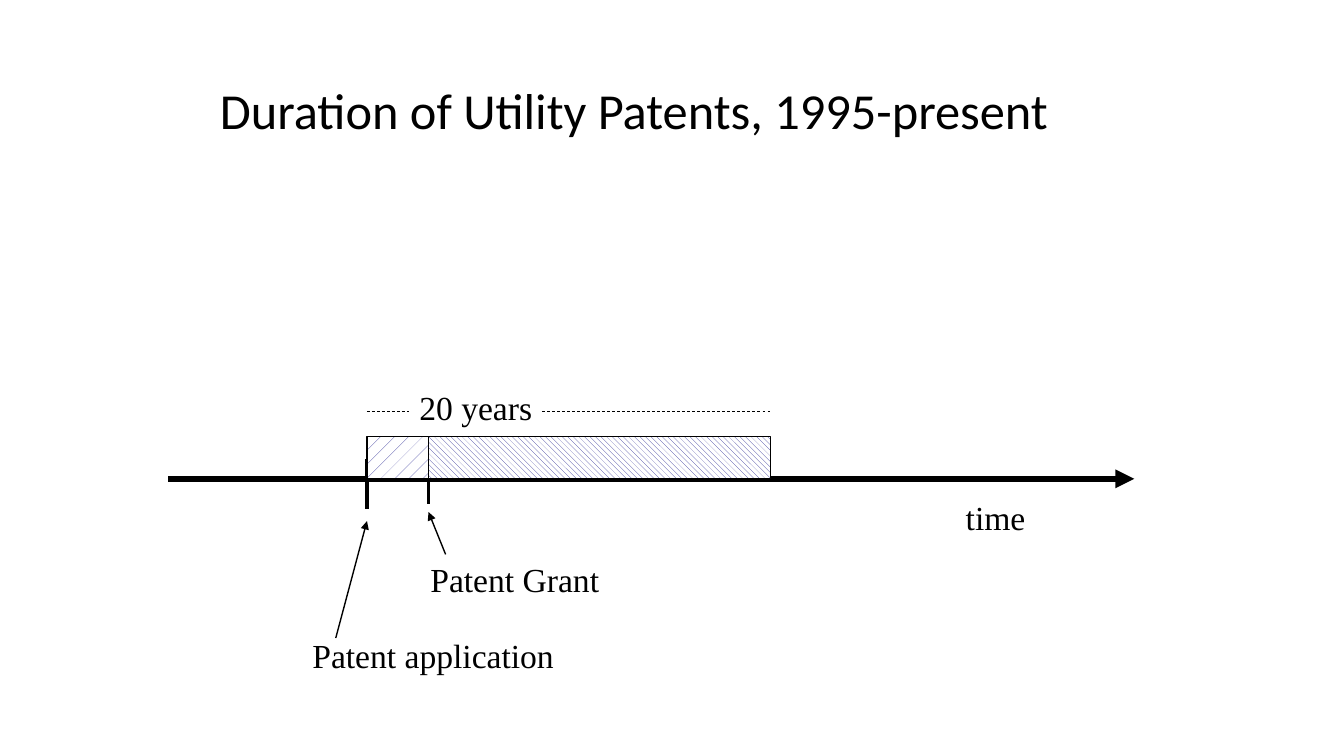
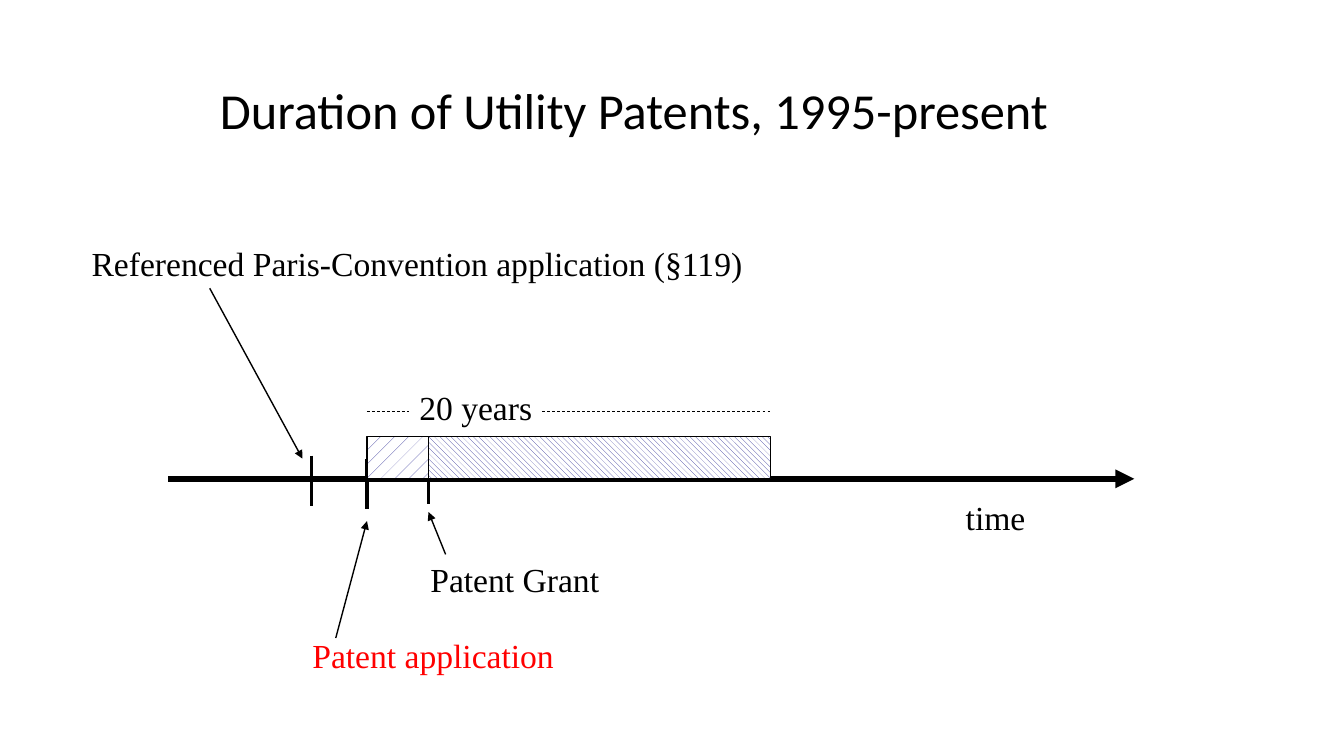
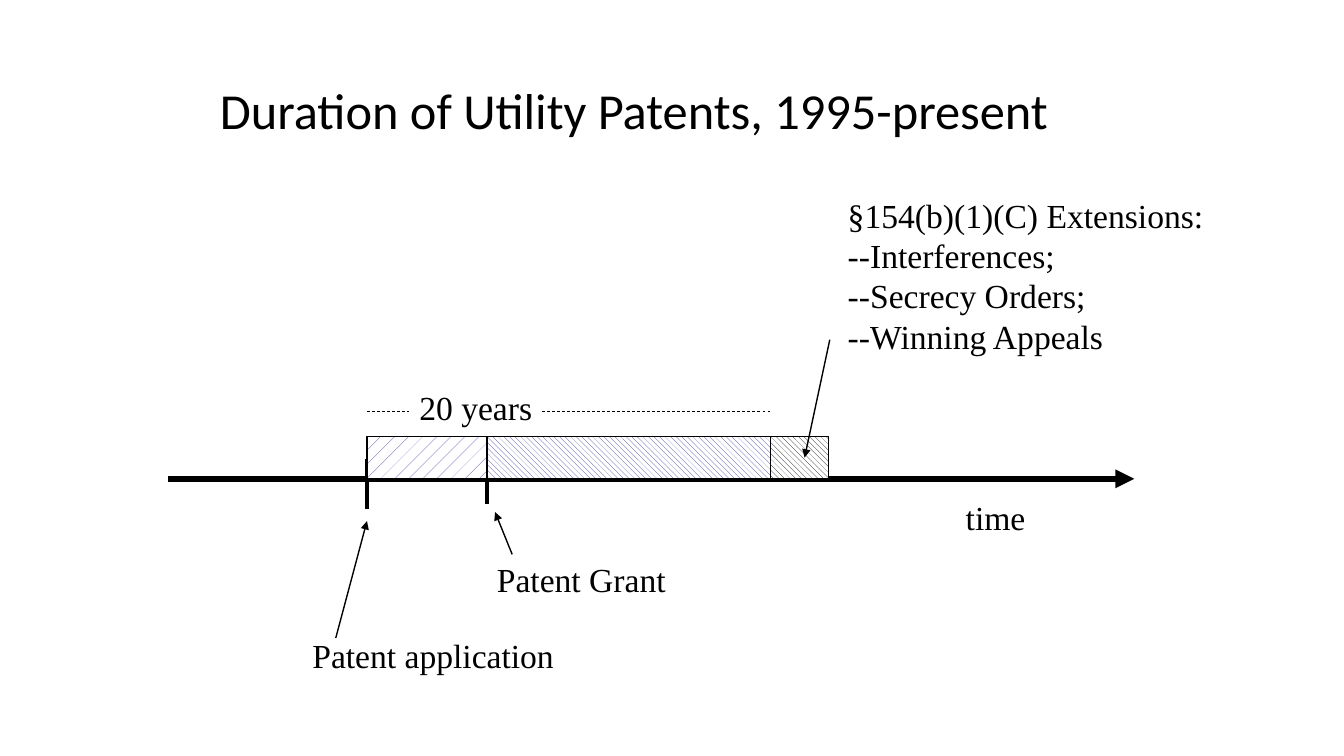
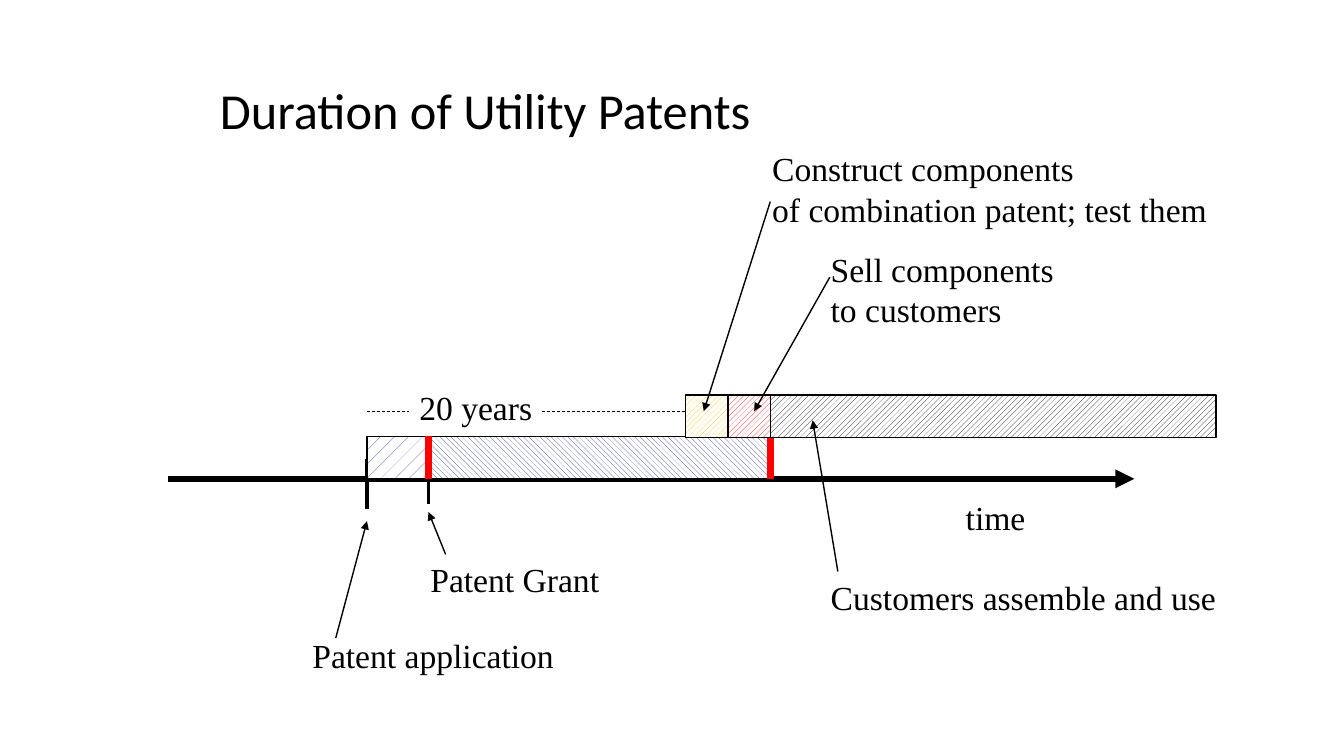
from lxml.etree import SubElement
from pptx import Presentation
from pptx.dml.color import RGBColor
from pptx.enum.dml import MSO_LINE, MSO_PATTERN
from pptx.enum.shapes import MSO_CONNECTOR, MSO_SHAPE
from pptx.enum.text import MSO_ANCHOR, MSO_AUTO_SIZE, PP_ALIGN
from pptx.oxml.ns import qn
from pptx.util import Inches, Pt

COLORS = {
    "black": "000000",
    "white": "FFFFFF",
    "blue": "333399",
    "red": "FF0000",
    "gold": "FFCC00",
}
HEAD, BODY = "Calibri", "Times New Roman"
TITLE = (2.08, 0.5, 9.5, 1.25)
TIME = (1.67, 3.79, 9.58, 2.96)
BAR = 0.42   # height of every bar
ROW = 0.5    # height of a one-line label
TERM = "Duration of Utility Patents, 1995-present"
DOWN = MSO_PATTERN.WIDE_DOWNWARD_DIAGONAL
UP = MSO_PATTERN.WIDE_UPWARD_DIAGONAL
DOTS = MSO_PATTERN.PERCENT_5


def color(name):
    return RGBColor.from_string(COLORS[name])


def style(para, font, size, tint="black"):
    for run in para.runs:
        run.font.name = font
        run.font.size = Pt(size)
        run.font.color.rgb = color(tint)


# Basic parts
def line(slide, start, end, width=1, tint="black", arrow=False, dash=False):
    link = slide.shapes.add_connector(
        MSO_CONNECTOR.STRAIGHT, *[Inches(v) for v in (*start, *end)])
    link.line.width = Pt(width)
    link.line.color.rgb = color(tint)
    if dash:
        link.line.dash_style = MSO_LINE.DASH
    if arrow:
        SubElement(link.line._get_or_add_ln(), qn("a:tailEnd"), type="triangle")
    SubElement(link._element.spPr, qn("a:effectLst"))


def label(slide, box, text, tint="black"):
    shape = slide.shapes.add_textbox(*[Inches(v) for v in box])
    frame = shape.text_frame
    frame.text = text
    frame.word_wrap = False
    frame.auto_size = MSO_AUTO_SIZE.SHAPE_TO_FIT_TEXT
    for para in frame.paragraphs:
        style(para, BODY, 24, tint)


def bar(slide, left, top, width, pattern, tint):
    shape = slide.shapes.add_shape(
        MSO_SHAPE.RECTANGLE, *[Inches(v) for v in (left, top, width, BAR)])
    shape.shadow.inherit = False
    shape.fill.patterned()
    shape.fill.pattern = pattern
    shape.fill.fore_color.rgb = color(tint)
    shape.fill.back_color.rgb = color("white")
    shape.line.color.rgb = color("black")
    shape.line.width = Pt(1)


# Slide with its title
def begin(deck, text):
    slide = deck.slides.add_slide(deck.slide_layouts[5])
    title = slide.shapes.title
    title.left, title.top, title.width, title.height = map(Inches, TITLE)
    frame = title.text_frame
    frame.text = text
    frame.vertical_anchor = MSO_ANCHOR.MIDDLE
    para = frame.paragraphs[0]
    para.alignment = PP_ALIGN.LEFT
    para.line_spacing = 0.9
    style(para, HEAD, 36)
    return slide


# Time axis with the patent term; returns filing, grant, expiry and axis places
def timeline(slide, box, wait=0.61, shift=0, tint="black"):
    left, top, width, _ = box
    axis = top + 0.96
    filed, ends = left + 1.97, left + 5.97
    grant = filed + wait

    line(slide, (left, axis), (left + width, axis), 4.5, arrow=True)
    label(slide, (left + 7.81, axis + 0.13, 0.79, ROW), "time")

    # Filing
    line(slide, (filed, axis - 0.2), (filed, axis + 0.3), 2.25)
    label(slide, (filed - 0.64, axis + 1.5, 2.6, ROW), "Patent application", tint)
    line(slide, (filed - 0.31, axis + 1.58), (filed, axis + 0.42), arrow=True)

    # Grant
    line(slide, (grant, axis - 0.25), (grant, axis + 0.25), 2.25)
    bar(slide, grant, axis - BAR, ends - grant, DOWN, "blue")
    note = grant + shift
    label(slide, (note - 0.08, axis + 0.75, 1.88, ROW), "Patent Grant")
    line(slide, (note + 0.17, axis + 0.75), (note, axis + 0.33), arrow=True)
    bar(slide, filed, axis - BAR, wait, DOTS, "blue")

    # Length of the term
    span = (filed + 0.42, filed + 1.74)
    label(slide, (span[0], top, span[1] - span[0], ROW), "20 years")
    for a, b in ((filed, span[0]), (span[1], ends)):
        line(slide, (a, top + 0.29), (b, top + 0.29), 0.5, dash=True)
    return filed, grant, ends, axis


# Label with an arrow, both placed from the label's corner
def callout(slide, box, text, start, tip):
    left, top = box[:2]
    label(slide, box, text)
    line(slide, (left + start[0], top + start[1]), tip, arrow=True)


def plain(deck):
    timeline(begin(deck, TERM), TIME)


def treaty(deck):
    slide = begin(deck, TERM)
    filed, _, _, axis = timeline(slide, TIME, tint="red")
    prior = filed - 0.55
    line(slide, (prior, axis - 0.23), (prior, axis + 0.27), 2.25)
    callout(slide, (0.81, 2.36, 6.88, ROW),
            "Referenced Paris-Convention application (§119)",
            (1.27, 0.5), (prior - 0.09, axis - 0.2))


def extended(deck):
    slide = begin(deck, TERM)
    _, _, ends, axis = timeline(slide, TIME, wait=1.19, shift=0.08)
    bar(slide, ends, axis - BAR, 0.58, DOWN, "black")
    callout(slide, (8.31, 1.88, 3.93, 1.72),
            "§154(b)(1)(C) Extensions:\n--Interferences;\n"
            "--Secrecy Orders;\n--Winning Appeals",
            (-0.08, 1.49), (ends + 0.34, axis - 0.21))


def combined(deck):
    slide = begin(deck, "Duration of Utility Patents")
    _, grant, ends, axis = timeline(slide, TIME)
    for x in (ends, grant):
        line(slide, (x, axis - BAR), (x, axis), 5, "red")

    # Activities before and after expiry
    top = axis - 2 * BAR + 0.01
    for x, width, tint in ((ends, 4.42, "black"), (ends - BAR, BAR, "red"),
                           (ends - 2 * BAR, BAR, "gold")):
        bar(slide, x, top, width, UP, tint)
    notes = (
        ((7.56, 1.42, 4.55, 0.91),
         "Construct components\nof combination patent; test them",
         (0.08, 0.58), (ends - 0.66, top + 0.16)),
        ((8.14, 2.42, 2.52, 0.91), "Sell components\nto customers",
         (0.09, 0.33), (ends - 0.16, top + 0.16)),
        ((8.14, 5.67, 4.02, ROW), "Customers assemble and use",
         (0.17, 0), (ends + 0.42, top + 0.25)),
    )
    for note in notes:
        callout(slide, *note)


def main():
    deck = Presentation()
    deck.slide_width, deck.slide_height = Inches(13.33), Inches(7.5)
    for build in (plain, treaty, extended, combined):
        build(deck)
    deck.save("out.pptx")


if __name__ == "__main__":
    main()
